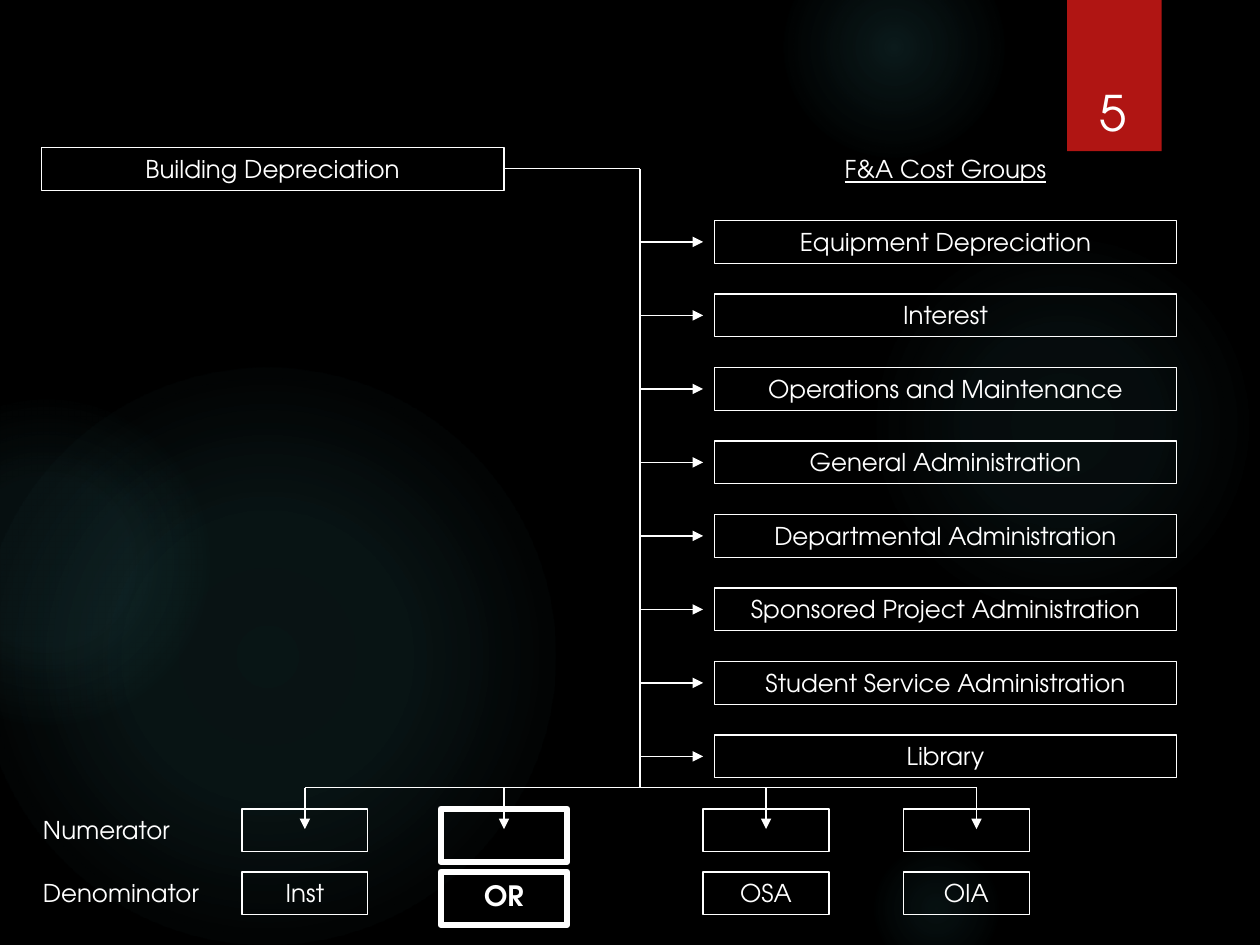
from lxml import etree
from pptx import Presentation
from pptx.dml.color import RGBColor
from pptx.enum import shapes, text
from pptx.oxml import ns
from pptx.util import Inches, Pt

BLACK = RGBColor(0x00, 0x00, 0x00)
WHITE = RGBColor(0xFF, 0xFF, 0xFF)
RED = RGBColor(0xB0, 0x15, 0x13)
TEAL = RGBColor(0x50, 0xB9, 0xC1)

GLOWS = [
    (6.89, 1.83, 3.08, [(0, 7), (36, 6), (69, 0)]),
    (6.22, -0.5, 1.75, [(0, 14), (36, 7), (73, 0)]),
    (6.89, 6.67, 1.08, [(0, 9), (36, 5), (66, 0)]),
    (-0.17, 2.92, 4.58, [(0, 11), (36, 10), (75, 0)]),
    (-0.92, 3.17, 2.58, [(0, 8), (36, 8), (72, 0)]),
]
COST_GROUPS = [
    "Equipment Depreciation",
    "Interest",
    "Operations and Maintenance",
    "General Administration",
    "Departmental Administration",
    "Sponsored Project Administration",
    "Student Service Administration",
    "Library",
]
BASES = [("Inst", 1.92), ("OR", 3.5), ("OSA", 5.58), ("OIA", 7.17)]

GROUP_LEFT, GROUP_WIDTH, ROW_HEIGHT = 5.67, 3.67, 0.34
GROUP_TOP, GROUP_STEP = 1.75, 7 / 12
TRUNK_X, TRUNK_TOP, TRUNK_BOTTOM = 5.08, 1.34, 6.25
NUMERATOR_TOP, DENOMINATOR_TOP = 6.42, 6.92


def write(shape, words, size=14, bold=False, underline=False, anchor=text.MSO_ANCHOR.TOP):
    frame = shape.text_frame
    frame.word_wrap = True
    frame.vertical_anchor = anchor
    paragraph = frame.paragraphs[0]
    paragraph.alignment = text.PP_ALIGN.CENTER
    run = paragraph.add_run()
    run.text = words
    run.font.name = "TeX Gyre Adventor"
    run.font.size = Pt(size)
    run.font.bold = bold
    run.font.underline = underline
    run.font.color.rgb = WHITE


class Diagram:
    line_color = WHITE
    line_width = 0.75

    def __init__(self, slide):
        self.slide = slide

    def panel(self, kind, left, top, width, height, color):
        shape = self.slide.shapes.add_shape(
            kind, Inches(left), Inches(top), Inches(width), Inches(height))
        shape.shadow.inherit = False
        shape.fill.solid()
        shape.fill.fore_color.rgb = color
        shape.line.fill.background()
        return shape

    def glow(self, left, top, size, stops):
        shape = self.panel(shapes.MSO_SHAPE.OVAL, left, top, size, size, TEAL)
        solid = shape._element.spPr.find(ns.qn("a:solidFill"))
        gradient = etree.Element(ns.qn("a:gradFill"))
        stop_list = etree.SubElement(gradient, ns.qn("a:gsLst"))
        for position, opacity in stops:
            stop = etree.SubElement(stop_list, ns.qn("a:gs"), pos=str(position * 1000))
            color = etree.SubElement(stop, ns.qn("a:srgbClr"), val=str(TEAL))
            etree.SubElement(color, ns.qn("a:alpha"), val=str(opacity * 1000))
        focus = etree.SubElement(gradient, ns.qn("a:path"), {"path": "circle"})
        etree.SubElement(focus, ns.qn("a:fillToRect"), dict.fromkeys("ltrb", "50000"))
        solid.getparent().replace(solid, gradient)

    def box(self, left, top, width, height=ROW_HEIGHT, words="", line_width=line_width, **style):
        shape = self.panel(shapes.MSO_SHAPE.RECTANGLE, left, top, width, height, BLACK)
        shape.fill.background()
        shape.line.color.rgb = self.line_color
        shape.line.width = Pt(line_width)
        if words:
            write(shape, words, **style)
        return shape

    def label(self, left, top, width, words, height=0.33, **style):
        shape = self.slide.shapes.add_textbox(
            Inches(left), Inches(top), Inches(width), Inches(height))
        write(shape, words, **style)

    def line(self, x1, y1, x2, y2, arrow=False):
        connector = self.slide.shapes.add_connector(
            shapes.MSO_CONNECTOR.STRAIGHT, Inches(x1), Inches(y1), Inches(x2), Inches(y2))
        connector.line.color.rgb = self.line_color
        connector.line.width = Pt(self.line_width)
        if arrow:
            etree.SubElement(connector.line._get_or_add_ln(), ns.qn("a:tailEnd"), type="triangle")
        etree.SubElement(connector._element.spPr, ns.qn("a:effectLst"))
        return connector


def main():
    deck = Presentation()
    deck.slide_width, deck.slide_height = Inches(10), Inches(7.5)
    slide = deck.slides.add_slide(deck.slide_layouts[6])
    slide.background.fill.solid()
    slide.background.fill.fore_color.rgb = BLACK
    diagram = Diagram(slide)

    for glow in GLOWS:
        diagram.glow(*glow)
    diagram.panel(shapes.MSO_SHAPE.RECTANGLE, 8.47, 0, 0.75, 1.2, RED)
    diagram.label(8.49, 0.29, 0.69, "5", height=0.88, size=28, anchor=text.MSO_ANCHOR.BOTTOM)

    building = diagram.box(0.33, 1.17, GROUP_WIDTH, words="Building Depreciation")
    feed = diagram.line(4, TRUNK_TOP, TRUNK_X, TRUNK_TOP)
    feed.begin_connect(building, 3)
    diagram.line(TRUNK_X, TRUNK_TOP, TRUNK_X, TRUNK_BOTTOM)

    diagram.label(GROUP_LEFT, 1.17, GROUP_WIDTH, "F&A Cost Groups", underline=True)
    for row, group in enumerate(COST_GROUPS):
        top = GROUP_TOP + row * GROUP_STEP
        middle = top + ROW_HEIGHT / 2
        diagram.box(GROUP_LEFT, top, GROUP_WIDTH, words=group)
        diagram.line(TRUNK_X, middle, 5.58, middle, arrow=True)

    diagram.line(2.42, TRUNK_BOTTOM, 7.75, TRUNK_BOTTOM)
    for base, left in BASES:
        chosen = base == "OR"
        height, line_width = (0.42, 3.75) if chosen else (ROW_HEIGHT, 0.75)
        diagram.box(left, NUMERATOR_TOP, 1, height, line_width=line_width)
        diagram.box(left, DENOMINATOR_TOP, 1, height, base, line_width,
                    size=16 if chosen else 14, bold=chosen)
        arrow_x = 7.75 if base == "OIA" else left + 0.5
        diagram.line(arrow_x, TRUNK_BOTTOM, arrow_x, 6.58, arrow=True)

    diagram.label(0.22, NUMERATOR_TOP, 1.25, "Numerator")
    diagram.label(0.17, DENOMINATOR_TOP, 1.58, "Denominator")
    deck.save("out.pptx")


if __name__ == "__main__":
    main()
